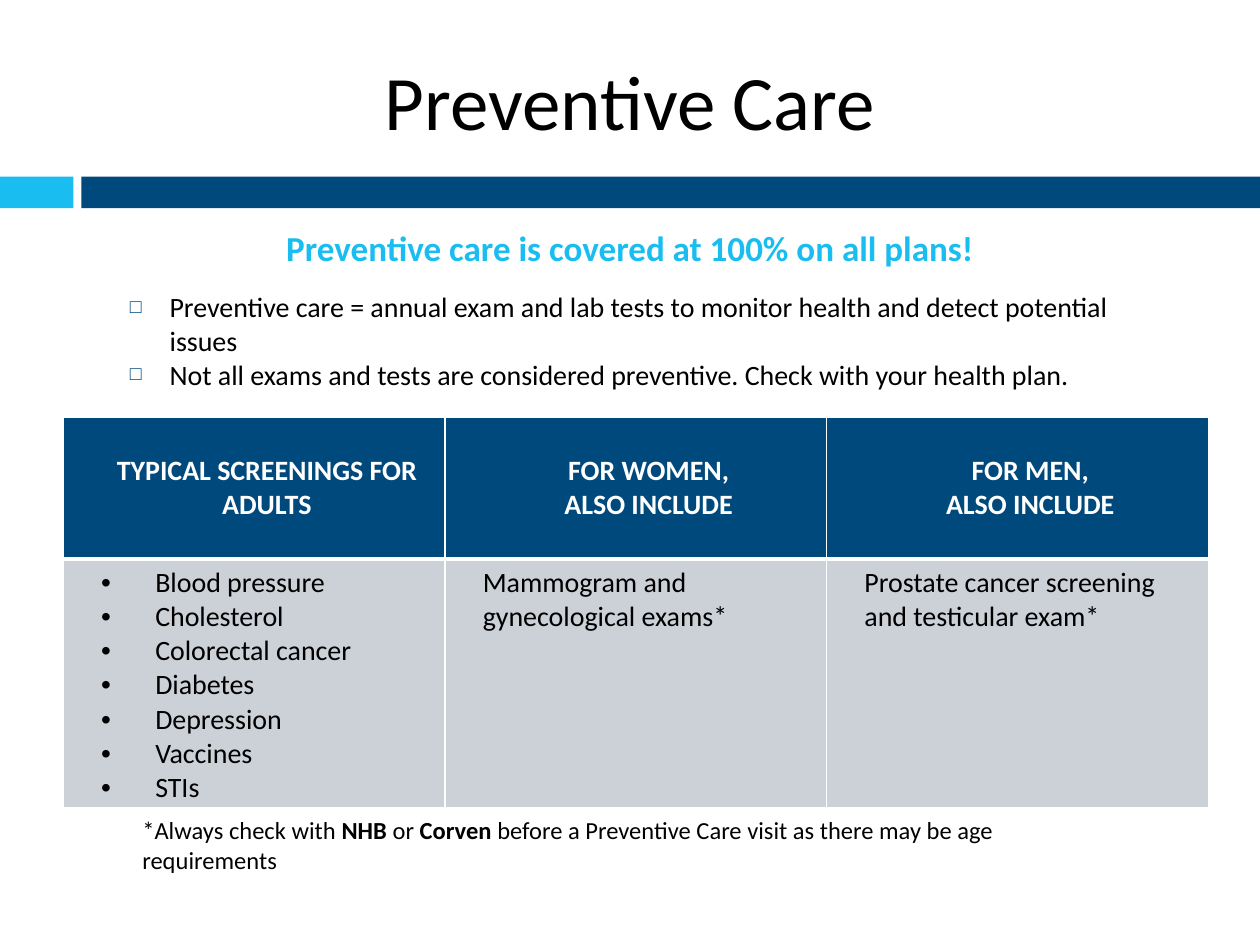
import pptx
import pptx.util
import pptx.dml.color
import pptx.enum.shapes
import pptx.enum.text
import pptx.oxml.ns
import lxml.etree

Cm, Pt = pptx.util.Cm, pptx.util.Pt
ALIGN = pptx.enum.text.PP_ALIGN
ANCHOR = pptx.enum.text.MSO_ANCHOR
COLORS = {"sky": "1ABDF0", "navy": "00497C", "gray": "CCD0D7",
          "black": "000000", "white": "FFFFFF"}


def rgb(name):
    return pptx.dml.color.RGBColor.from_string(COLORS[name])


def add_xml(parent, tag, **attrs):
    return lxml.etree.SubElement(parent, pptx.oxml.ns.qn(tag), attrs)


def add_bullet(p, char, left, hanging, color=None, percent=100):
    """Give a paragraph a hanging bullet; lengths are in cm."""
    pPr = p._p.get_or_add_pPr()
    pPr.set("marL", str(Cm(left)))
    pPr.set("indent", str(-Cm(hanging)))
    if color:
        add_xml(add_xml(pPr, "a:buClr"), "a:srgbClr", val=COLORS[color])
    add_xml(pPr, "a:buSzPct", val=str(percent * 1000))
    add_xml(pPr, "a:buFont", typeface="Arial")
    add_xml(pPr, "a:buChar", char=char)


def write(tf, text, size=16, color="black", bold=False, align=ALIGN.LEFT,
          after=0, bullet=None):
    """Add a paragraph; text is a string or a list of (string, bold) runs."""
    p = tf.paragraphs[0]
    if p.runs:
        p = tf.add_paragraph()
    p.alignment = align
    p.space_before, p.space_after = Pt(0), Pt(after)
    if bullet:
        add_bullet(p, **bullet)
    for part, is_bold in [(text, bold)] if isinstance(text, str) else text:
        r = p.add_run()
        r.text = part
        r.font.name, r.font.size, r.font.bold = "Calibri", Pt(size), is_bold
        r.font.color.rgb = rgb(color)


class SlideBuilder:
    def __init__(self, slide, border="white"):
        self.slide = slide
        self.border = border

    def bar(self, left, top, width, height, color):
        sp = self.slide.shapes.add_shape(
            pptx.enum.shapes.MSO_SHAPE.RECTANGLE,
            Cm(left), Cm(top), Cm(width), Cm(height))
        sp.shadow.inherit = False
        sp.fill.solid()
        sp.fill.fore_color.rgb = rgb(color)
        sp.line.fill.background()

    def text_box(self, left, top, width, height, anchor=ANCHOR.TOP):
        sp = self.slide.shapes.add_textbox(Cm(left), Cm(top), Cm(width), Cm(height))
        tf = sp.text_frame
        tf.word_wrap = True
        tf.vertical_anchor = anchor
        return tf

    def table(self, left, top, width, row_heights, columns):
        table = self.slide.shapes.add_table(
            len(row_heights), columns, Cm(left), Cm(top),
            Cm(width), Cm(sum(row_heights))).table
        for row, height in zip(table.rows, row_heights):
            row.height = Cm(height)
        return table

    def cell(self, cell, fill, anchor, **border_widths):
        """Style a cell; border_widths are points for the sides L, R, T, B."""
        cell.margin_left, cell.margin_right = Cm(0.76), Cm(0.25)
        cell.margin_top = cell.margin_bottom = Cm(0.13)
        cell.vertical_anchor = anchor
        tcPr = cell._tc.get_or_add_tcPr()
        for side in "LRTB":
            ln = add_xml(tcPr, "a:ln" + side, w=str(Pt(border_widths.get(side, 1))))
            add_xml(add_xml(ln, "a:solidFill"), "a:srgbClr", val=COLORS[self.border])
        cell.fill.solid()
        cell.fill.fore_color.rgb = rgb(fill)
        return cell.text_frame


def main():
    prs = pptx.Presentation()
    prs.slide_width, prs.slide_height = Cm(25.4), Cm(19.05)
    s = SlideBuilder(prs.slides.add_slide(prs.slide_layouts[6]))

    s.bar(0, 3.56, 1.48, 0.64, "sky")
    s.bar(1.64, 3.56, 23.76, 0.64, "navy")

    title = s.text_box(1.06, 0.64, 23.28, 2.75, ANCHOR.MIDDLE)
    write(title, "Preventive Care", size=44, align=ALIGN.CENTER)

    body = s.text_box(1.48, 4.45, 22.44, 3.8)
    write(body, "Preventive care is covered at 100% on all plans!", size=20,
          color="sky", bold=True, align=ALIGN.CENTER, after=12)
    square = dict(char="□", left=1.69, hanging=0.8, color="navy", percent=70)
    for point in (
            "Preventive care = annual exam and lab tests to monitor health "
            "and detect potential issues",
            "Not all exams and tests are considered preventive. "
            "Check with your health plan."):
        write(body, point, bullet=square)

    dot = dict(char="•", left=1.09, hanging=1.09)
    screenings = [
        (["TYPICAL SCREENINGS FOR ADULTS"],
         ["Blood pressure", "Cholesterol", "Colorectal cancer", "Diabetes",
          "Depression", "Vaccines", "STIs"], dot),
        (["FOR WOMEN,", "ALSO INCLUDE"],
         ["Mammogram and gynecological exams*"], None),
        (["FOR MEN,", "ALSO INCLUDE"],
         ["Prostate cancer screening and testicular exam*"], None),
    ]
    table = s.table(1.28, 8.41, 23.08, [2.86, 5.02], len(screenings))
    for col, (heading, items, bullet) in enumerate(screenings):
        tf = s.cell(table.cell(0, col), "navy", ANCHOR.MIDDLE, B=3)
        for line in heading:
            write(tf, line, color="white", bold=True, align=ALIGN.CENTER)
        tf = s.cell(table.cell(1, col), "gray", ANCHOR.TOP, T=3)
        for item in items:
            write(tf, item, bullet=bullet)

    footnote = s.text_box(2.62, 16.31, 20.4, 0.86)
    write(footnote, [
        ("*Always check with ", False), ("NHB", True), (" or ", False),
        ("Corven", True),
        (" before a Preventive Care visit as there may be age requirements", False),
    ], size=14)

    prs.save("out.pptx")


if __name__ == "__main__":
    main()
